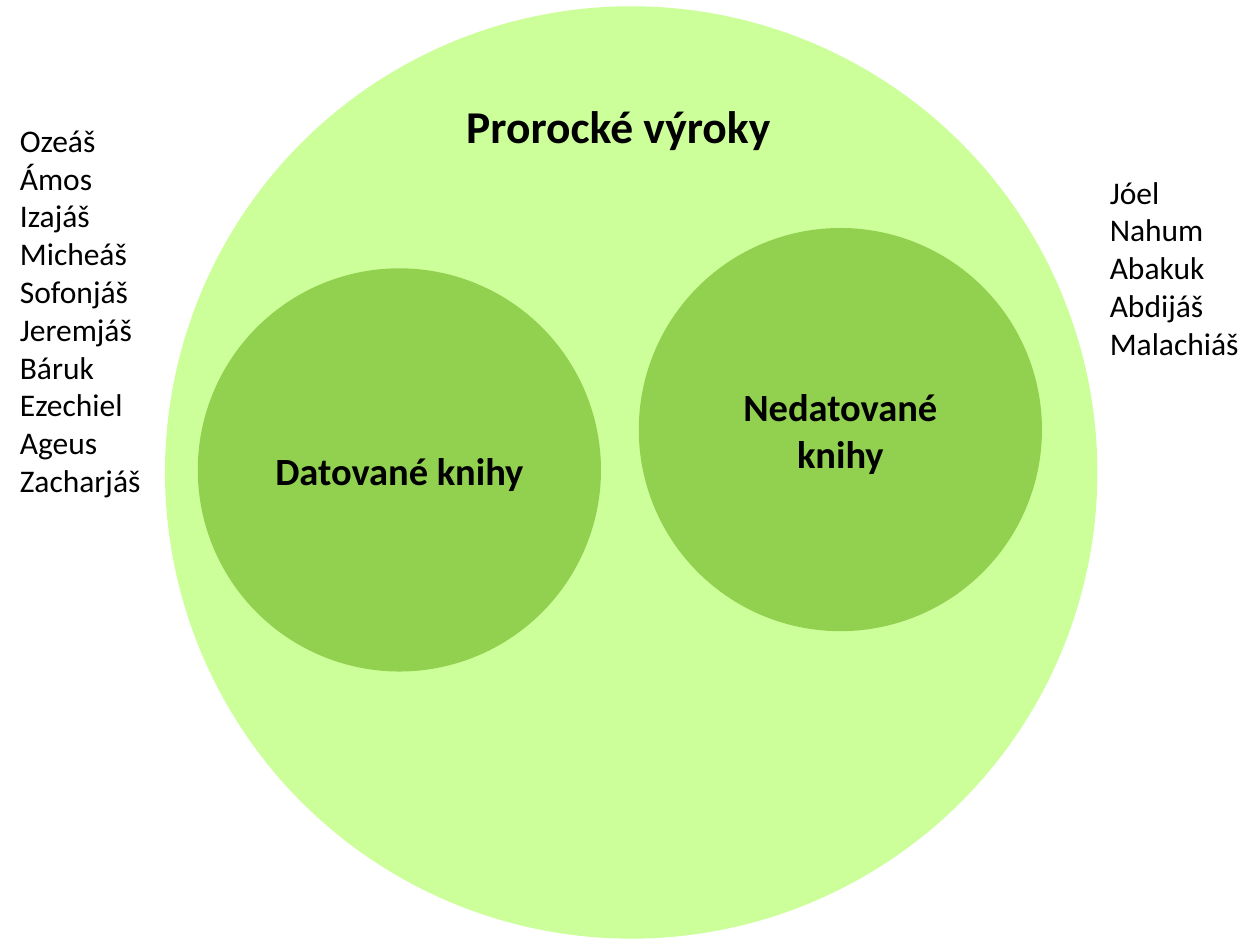
import pptx
import pptx.util
import pptx.dml.color
import pptx.enum.shapes
import pptx.enum.text
from dataclasses import dataclass


@dataclass(frozen=True)
class Theme:
    font: str = "Calibri"
    ink: str = "000000"
    pale: str = "CCFF99"
    green: str = "92D050"
    head: int = 26
    label: int = 22
    body: int = 18


theme = Theme()
align = pptx.enum.text.PP_ALIGN
anchor = pptx.enum.text.MSO_ANCHOR
color = pptx.dml.color.RGBColor.from_string

deck = pptx.Presentation()
deck.slide_width = pptx.util.Inches(10)
deck.slide_height = pptx.util.Inches(7.5)
slide = deck.slides.add_slide(deck.slide_layouts[5])

# Grid: 100 columns by 75 rows of square cells
cell = deck.slide_width / 100


def place(cols):
    return [round(n * cell) for n in cols]


def write(shape, lines, size, bold=False, side=align.LEFT, mid=anchor.TOP, wrap=False):
    frame = shape.text_frame
    frame.word_wrap = wrap
    frame.vertical_anchor = mid
    if not wrap:
        frame.auto_size = pptx.enum.text.MSO_AUTO_SIZE.SHAPE_TO_FIT_TEXT
    for i, line in enumerate(lines):
        para = frame.paragraphs[0] if i == 0 else frame.add_paragraph()
        para.alignment = side
        run = para.add_run()
        run.text = line
        run.font.name = theme.font
        run.font.size = pptx.util.Pt(size)
        run.font.bold = bold
        run.font.color.rgb = color(theme.ink)


# Circles: the whole set, then its two subsets
circles = [
    (13.1, 0.5, 74, theme.pale, None),
    (15.7, 21.3, 32, theme.green, "Datované knihy"),
    (50.7, 18.1, 32, theme.green, "Nedatované knihy"),
]
for left, top, size, fill, label in circles:
    disc = slide.shapes.add_shape(
        pptx.enum.shapes.MSO_SHAPE.OVAL, *place((left, top, size, size)))
    disc.shadow.inherit = False
    disc.fill.solid()
    disc.fill.fore_color.rgb = color(fill)
    disc.line.fill.background()
    if label:
        write(disc, [label], theme.label, True, align.CENTER, anchor.MIDDLE, True)

# Lists of books beside the circles
lists = [
    ((0.6, 9.1, 11.7, 31.3),
     ["Ozeáš", "Ámos", "Izajáš", "Micheáš", "Sofonjáš",
      "Jeremjáš", "Báruk", "Ezechiel", "Ageus", "Zacharjáš"]),
    ((8.71 * 10, 13.2, 12.3, 16.2),
     ["Jóel", "Nahum", "Abakuk", "Abdijáš", "Malachiáš"]),
]
for cols, names in lists:
    write(slide.shapes.add_textbox(*place(cols)), names, theme.body)

# Title, brought in front of the large circle
title = slide.shapes.title
title.left, title.top, title.width, title.height = place((36, 7.3, 26.4, 5.4))
write(title, ["Prorocké výroky"], theme.head, True)
title.element.getparent().append(title.element)

deck.save("out.pptx")
